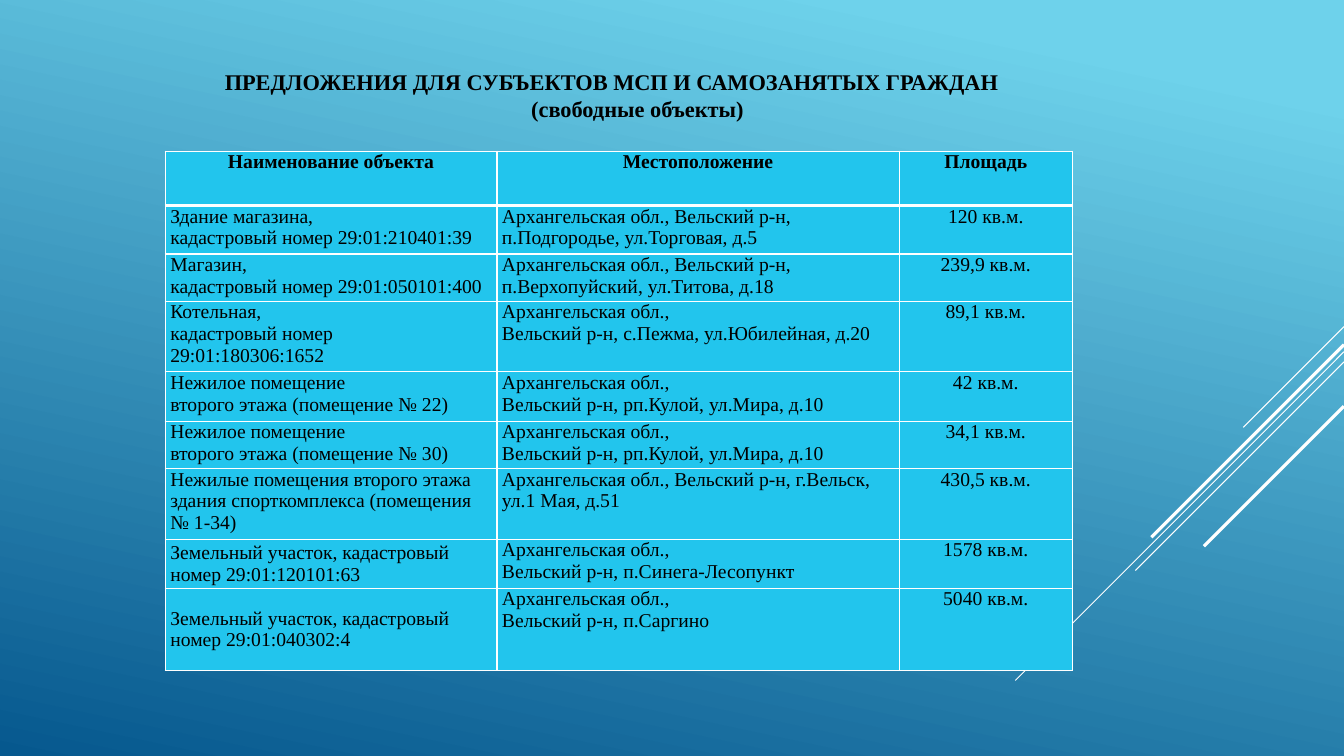
from dataclasses import dataclass

from lxml.etree import SubElement
from pptx import Presentation
from pptx.dml.color import RGBColor
from pptx.enum.shapes import MSO_CONNECTOR
from pptx.enum.text import MSO_ANCHOR, MSO_AUTO_SIZE, PP_ALIGN
from pptx.oxml import parse_xml
from pptx.oxml.ns import nsdecls, qn
from pptx.util import Inches, Pt

# Grid of square cells, ten to the inch
COLUMNS, ROWS = 133.33, 75
FONT = "Times New Roman"
WHITE, BLACK, CELL_BLUE = "FFFFFF", "000000", "22C5ED"
COLUMN_WIDTHS = (32.9, 39.9, 17.2)
HEADERS = ("Наименование объекта", "Местоположение", "Площадь")


@dataclass(frozen=True)
class Ray:
    """A diagonal from the right edge, running equally far left and down."""
    start_row: float
    run: float
    weight: float = 0.75


@dataclass(frozen=True)
class Property:
    name: str
    place: str
    area: str
    height: float
    name_anchor: MSO_ANCHOR = MSO_ANCHOR.TOP


RAYS = (
    Ray(32.4, 10),
    Ray(34.9, 32.6),
    Ray(35.9, 20.7),
    Ray(34.2, 19.1, 2.25),
    Ray(40.3, 13.9, 2.25),
)

PROPERTIES = (
    Property("Здание магазина,\nкадастровый номер 29:01:210401:39",
             "Архангельская обл., Вельский р-н, п.Подгородье, ул.Торговая, д.5",
             "120 кв.м.", 4.8),
    Property("Магазин,\nкадастровый номер 29:01:050101:400",
             "Архангельская обл., Вельский р-н, п.Верхопуйский, ул.Титова, д.18",
             "239,9 кв.м.", 4.7),
    Property("Котельная,\nкадастровый номер 29:01:180306:1652",
             "Архангельская обл.,\nВельский р-н, с.Пежма, ул.Юбилейная, д.20",
             "89,1 кв.м.", 7),
    Property("Нежилое помещение\nвторого этажа (помещение № 22)",
             "Архангельская обл.,\nВельский р-н, рп.Кулой, ул.Мира, д.10",
             "42 кв.м.", 4.9),
    Property("Нежилое помещение\nвторого этажа (помещение № 30)",
             "Архангельская обл.,\nВельский р-н, рп.Кулой, ул.Мира, д.10",
             "34,1 кв.м.", 4.7),
    Property("Нежилые помещения второго этажа здания спорткомплекса (помещения № 1-34)",
             "Архангельская обл., Вельский р-н, г.Вельск, ул.1 Мая, д.51",
             "430,5 кв.м.", 7),
    Property("Земельный участок, кадастровый номер 29:01:120101:63",
             "Архангельская обл.,\nВельский р-н, п.Синега-Лесопункт",
             "1578 кв.м.", 4.9, MSO_ANCHOR.MIDDLE),
    Property("Земельный участок, кадастровый номер 29:01:040302:4",
             "Архангельская обл.,\nВельский р-н, п.Саргино",
             "5040 кв.м.", 8.1, MSO_ANCHOR.MIDDLE),
)


def grid(cells: float) -> int:
    return Inches(cells / 10)


def color(value: str) -> RGBColor:
    return RGBColor.from_string(value)


def write(frame, text: str, size: float, bold: bool, align: PP_ALIGN) -> None:
    for index, line in enumerate(text.split("\n")):
        para = frame.paragraphs[0] if index == 0 else frame.add_paragraph()
        para.alignment = align
        span = para.add_run()
        span.text = line
        span.font.name = FONT
        span.font.size = Pt(size)
        span.font.bold = bold
        span.font.color.rgb = color(BLACK)


def paint_background(page) -> None:
    fill = page.background.fill
    fill.gradient()
    fill.gradient_angle = 258
    for stop, (position, shade) in zip(fill.gradient_stops, ((0.1, "6ED2EB"), (1, "06588E"))):
        stop.position = position
        stop.color.rgb = color(shade)


def draw_ray(page, ray: Ray) -> None:
    line = page.shapes.add_connector(
        MSO_CONNECTOR.STRAIGHT, grid(COLUMNS), grid(ray.start_row),
        grid(COLUMNS - ray.run), grid(ray.start_row + ray.run))
    line.line.color.rgb = color(WHITE)
    line.line.width = Pt(ray.weight)
    SubElement(line.element.spPr, qn("a:effectLst"))


def write_title(page) -> None:
    title = page.shapes.title
    title.left, title.top, title.width, title.height = map(grid, (21.3, 6.3, 93.2, 6.4))
    frame = title.text_frame
    frame.word_wrap = True
    frame.auto_size = MSO_AUTO_SIZE.NONE
    frame.vertical_anchor = MSO_ANCHOR.TOP
    write(frame, "ПРЕДЛОЖЕНИЯ ДЛЯ СУБЪЕКТОВ МСП И САМОЗАНЯТЫХ ГРАЖДАН\n(свободные объекты)",
          16, True, PP_ALIGN.LEFT)
    # The second line is indented under the first
    frame.paragraphs[1]._p.get_or_add_pPr().set("marL", str(grid(30.4)))


def set_borders(cell, top: float, bottom: float) -> None:
    properties = cell._tc.get_or_add_tcPr()
    for index, (side, weight) in enumerate((("L", 1), ("R", 1), ("T", top), ("B", bottom))):
        properties.insert(index, parse_xml(
            f'<a:ln{side} {nsdecls("a")} w="{Pt(weight)}"><a:solidFill>'
            f'<a:srgbClr val="{WHITE}"/></a:solidFill></a:ln{side}>'))


def fill_cell(cell, text: str, align: PP_ALIGN, row: int, anchor: MSO_ANCHOR) -> None:
    cell.margin_left = cell.margin_right = grid(0.5)
    cell.margin_top = cell.margin_bottom = 0
    cell.vertical_anchor = anchor
    cell.fill.solid()
    cell.fill.fore_color.rgb = color(CELL_BLUE)
    set_borders(cell, top=3 if row == 1 else 1, bottom=3 if row == 0 else 1)
    write(cell.text_frame, text, 14, row == 0, align)


def draw_table(page) -> None:
    heights = [5.4] + [item.height for item in PROPERTIES]
    table = page.shapes.add_table(
        len(heights), len(HEADERS), grid(16.4), grid(15),
        grid(sum(COLUMN_WIDTHS)), grid(sum(heights))).table
    table.horz_banding = False
    for column, width in zip(table.columns, COLUMN_WIDTHS):
        column.width = grid(width)
    for row, height in zip(table.rows, heights):
        row.height = grid(height)

    # Header row
    for column, text in enumerate(HEADERS):
        fill_cell(table.cell(0, column), text, PP_ALIGN.CENTER, 0, MSO_ANCHOR.TOP)

    # One row for each property
    for row, item in enumerate(PROPERTIES, start=1):
        fill_cell(table.cell(row, 0), item.name, PP_ALIGN.LEFT, row, item.name_anchor)
        fill_cell(table.cell(row, 1), item.place, PP_ALIGN.LEFT, row, MSO_ANCHOR.TOP)
        fill_cell(table.cell(row, 2), item.area, PP_ALIGN.CENTER, row, MSO_ANCHOR.TOP)


def main() -> None:
    deck = Presentation()
    deck.slide_width, deck.slide_height = grid(COLUMNS), grid(ROWS)
    page = deck.slides.add_slide(deck.slide_layouts[5])
    paint_background(page)
    for ray in RAYS:
        draw_ray(page, ray)
    write_title(page)
    draw_table(page)
    deck.save("out.pptx")


if __name__ == "__main__":
    main()
